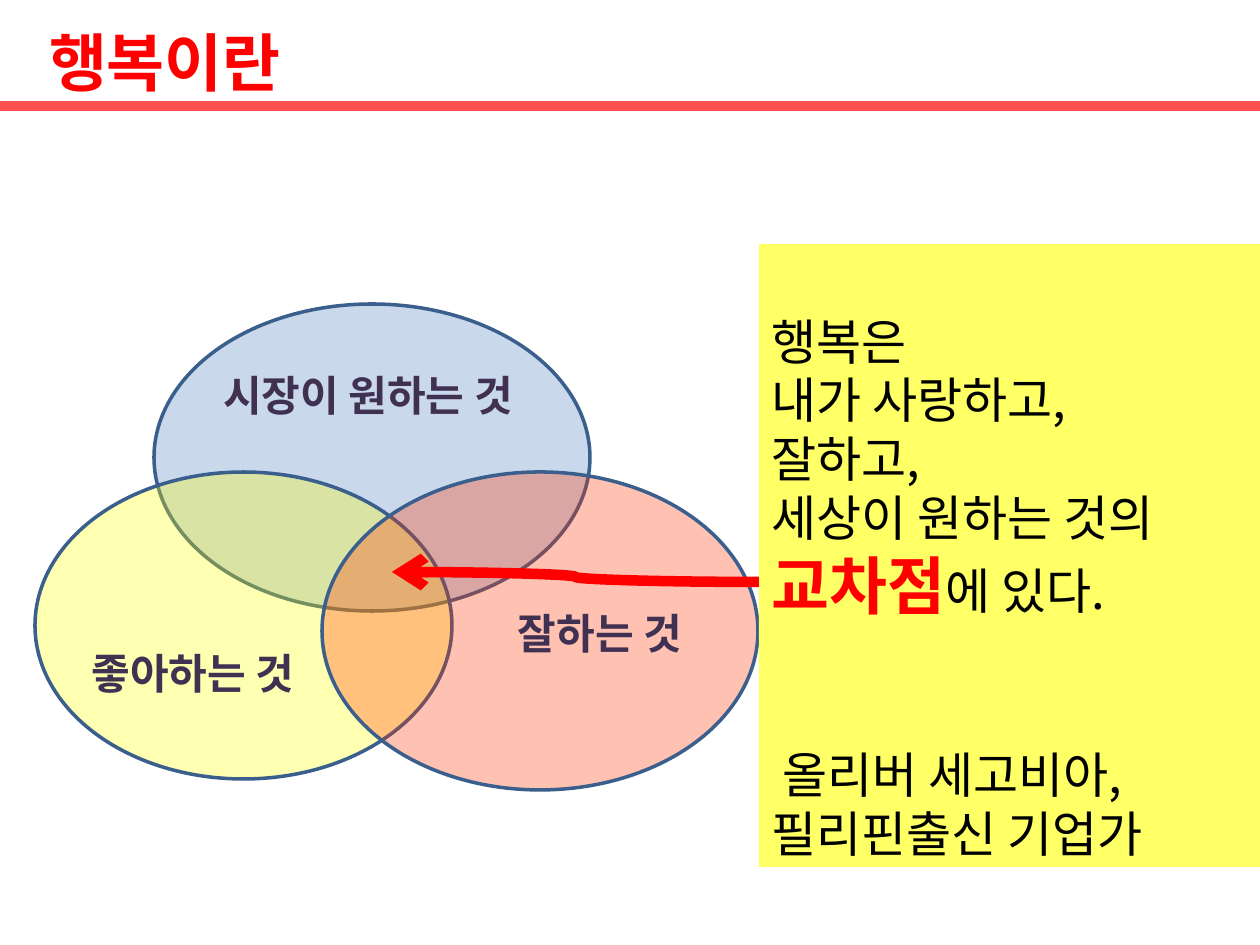
from lxml.etree import SubElement
from pptx import Presentation
from pptx.dml.color import RGBColor
from pptx.enum.shapes import MSO_CONNECTOR as Connector, MSO_SHAPE as Shape
from pptx.enum.text import MSO_ANCHOR as Anchor, MSO_AUTO_SIZE as AutoSize, PP_ALIGN as Align
from pptx.oxml.ns import qn
from pptx.util import Pt

PX = 914400 / 126
FONT = "Noto Sans CJK KR"


def px(*values):
    return [round(value * PX) for value in values]


def color(target, value):
    target.rgb = RGBColor.from_string(value)


presentation = Presentation()
presentation.slide_width, presentation.slide_height = px(1260, 945)
slide = presentation.slides.add_slide(presentation.slide_layouts[5])
runs = []

title = slide.shapes.title
title.left, title.top, title.width, title.height = px(0, -4, 1260, 131)
frame = title.text_frame
frame.auto_size = AutoSize.NONE
frame.vertical_anchor = Anchor.MIDDLE
frame.margin_left, frame.margin_top, frame.margin_right, frame.margin_bottom = px(49, 25, 49, 25)
paragraph = frame.paragraphs[0]
paragraph.alignment = Align.LEFT
runs.append((paragraph, "행복이란", 36, "FF0000", True))

rule = slide.shapes.add_connector(Connector.STRAIGHT, *px(0, 106, 1260, 106))
color(rule.line.color, "FF5050")
rule.line.width = Pt(6)

circles = [
    (154, 304, 436, 307, "4F81BD"),
    (35, 472, 417, 307, "FFFF00"),
    (322, 472, 436, 318, "FF3300"),
]
for *box, fill in circles:
    circle = slide.shapes.add_shape(Shape.OVAL, *px(*box))
    circle.shadow.inherit = False
    circle.fill.solid()
    color(circle.fill.fore_color, fill)
    fill_color = circle._element.spPr.find(qn("a:solidFill"))[0]
    SubElement(fill_color, qn("a:alpha"), val="30000")
    color(circle.line.color, "3A5F8C")
    circle.line.width = Pt(2)

labels = [
    (194, 363, 348, "시장이 원하는 것"),
    (64, 641, 258, "좋아하는 것"),
    (471, 601, 258, "잘하는 것"),
]
for left, top, width, text in labels:
    label = slide.shapes.add_textbox(*px(left, top, width, 63))
    frame = label.text_frame
    frame.word_wrap = True
    frame.vertical_anchor = Anchor.MIDDLE
    paragraph = frame.paragraphs[0]
    paragraph.alignment = Align.CENTER
    runs.append((paragraph, text, 24, "403152", True))

quote = slide.shapes.add_shape(Shape.RECTANGLE, *px(759, 244, 501, 623))
quote.shadow.inherit = False
quote.fill.solid()
color(quote.fill.fore_color, "FFFF66")
quote.line.fill.background()
frame = quote.text_frame
frame.word_wrap = True
frame.vertical_anchor = Anchor.TOP
frame.margin_top = px(67)[0]
quote_lines = [
    [("행복은", 28, "000000", False)],
    [("내가 사랑하고,", 28, "000000", False)],
    [("잘하고,", 28, "000000", False)],
    [("세상이 원하는 것의", 28, "000000", False)],
    [("교차점", 36, "FF0000", True), ("에 있다.", 28, "000000", False)],
    [(" 올리버 세고비아,", 28, "000000", False)],
    [("필리핀출신 기업가", 28, "000000", False)],
]
for index, line in enumerate(quote_lines):
    paragraph = frame.paragraphs[0] if index == 0 else frame.add_paragraph()
    paragraph.alignment = Align.LEFT
    if index == 5:
        paragraph.space_before = Pt(70)
    runs += [(paragraph, *part) for part in line]

for paragraph, text, size, font_color, bold in runs:
    run = paragraph.add_run()
    run.text = text
    run.font.name = FONT
    run.font.size = Pt(size)
    run.font.bold = bold
    color(run.font.color, font_color)
    SubElement(run.font._element, qn("a:ea"), typeface=FONT)

arrow = slide.shapes.add_connector(Connector.CURVE, *px(759, 582, 392, 572))
color(arrow.line.color, "FF0000")
arrow.line.width = Pt(6)
SubElement(arrow.line._get_or_add_ln(), qn("a:tailEnd"), type="arrow")

for connector in (rule, arrow):
    SubElement(connector._element.spPr, qn("a:effectLst"))

presentation.save("out.pptx")
